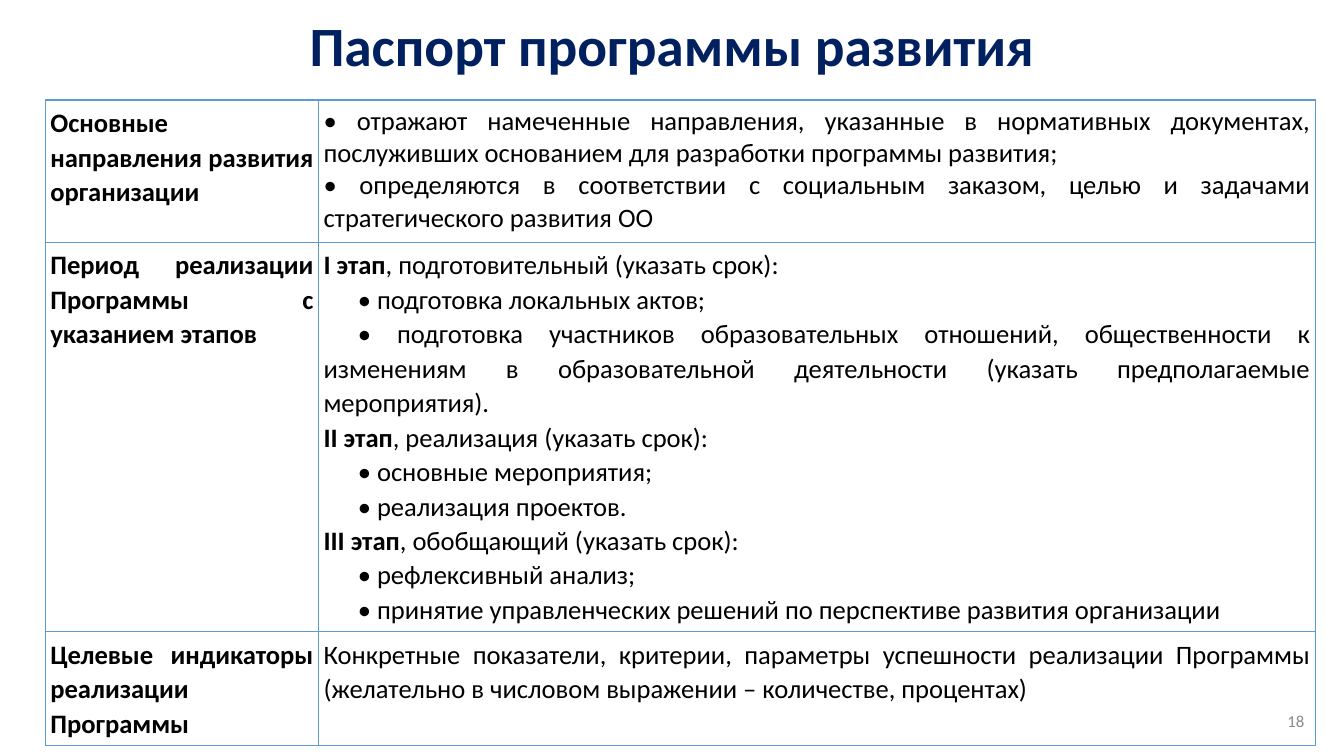
from dataclasses import dataclass

from lxml import etree
from pptx import Presentation
from pptx.dml.color import RGBColor
from pptx.enum.text import MSO_ANCHOR, MSO_AUTO_SIZE, PP_ALIGN
from pptx.oxml.ns import qn
from pptx.util import Pt

CENTER, RIGHT, JUSTIFY = PP_ALIGN.CENTER, PP_ALIGN.RIGHT, PP_ALIGN.JUSTIFY
MIDDLE = MSO_ANCHOR.MIDDLE
NO_AUTOFIT = MSO_AUTO_SIZE.NONE

FONT = "Calibri"
NAVY, BLACK, GRAY, BORDER_BLUE = "002060", "000000", "8C8C8C", "5B9BD5"
TITLE_ONLY_LAYOUT = 5
TABLE_SIZE = 19
CELL_INSET = Pt(3.6)
BULLET_INDENT = Pt(24.5)
COLUMN_WIDTHS = (195.12, 712.08)


@dataclass(frozen=True)
class Item:
    text: str
    lead: str = ""
    indented: bool = False
    bold: bool = False
    line_spacing: float | None = 1.07
    space_after: float = 0


@dataclass(frozen=True)
class PassportRow:
    height: float
    heading: str
    items: list[Item]


def bullet(text: str) -> Item:
    return Item(f"• {text}", indented=True)


def stage(number: str, description: str) -> Item:
    return Item(f", {description} (указать срок):", lead=f"{number} этап")


PASSPORT = [
    PassportRow(101.5, "Основные направления развития организации", [
        Item("• отражают намеченные направления, указанные в нормативных документах, "
             "послуживших основанием для разработки программы развития;", line_spacing=None),
        Item("• определяются в соответствии с социальным заказом, целью и задачами "
             "стратегического развития ОО", line_spacing=None),
    ]),
    PassportRow(267.8, "Период реализации Программы с указанием этапов", [
        stage("I", "подготовительный"),
        bullet("подготовка локальных актов;"),
        bullet("подготовка участников образовательных отношений, общественности к изменениям "
               "в образовательной деятельности (указать предполагаемые мероприятия)."),
        stage("II", "реализация"),
        bullet("основные мероприятия;"),
        bullet("реализация проектов."),
        stage("III", "обобщающий"),
        bullet("рефлексивный анализ;"),
        bullet("принятие управленческих решений по перспективе развития организации"),
    ]),
    PassportRow(79.2, "Целевые индикаторы реализации Программы", [
        Item("Конкретные показатели, критерии, параметры успешности реализации Программы "
             "(желательно в числовом выражении – количестве, процентах)", space_after=8),
    ]),
]


def format_font(font, size: float, color: str, bold: bool = False) -> None:
    font.name = FONT
    font.size = Pt(size)
    font.bold = bold
    font.color.rgb = RGBColor.from_string(color)


def place(shape, left: float, top: float, width: float, height: float) -> None:
    shape.left, shape.top = Pt(left), Pt(top)
    shape.width, shape.height = Pt(width), Pt(height)


def write_line(shape, text: str, alignment, size: float, color: str, bold: bool = False):
    frame = shape.text_frame
    frame.text = text
    frame.word_wrap = True
    frame.auto_size = NO_AUTOFIT
    frame.vertical_anchor = MIDDLE
    paragraph = frame.paragraphs[0]
    paragraph.alignment = alignment
    format_font(paragraph.runs[0].font, size, color, bold)
    return paragraph


def draw_borders(cell) -> None:
    properties = cell._tc.get_or_add_tcPr()
    for position, side in enumerate(("lnL", "lnR", "lnT", "lnB")):
        line = etree.Element(qn(f"a:{side}"), w=str(Pt(1)))
        fill = etree.SubElement(line, qn("a:solidFill"))
        etree.SubElement(fill, qn("a:srgbClr"), val=BORDER_BLUE)
        properties.insert(position, line)


def fill_cell(cell, items: list[Item]) -> None:
    cell.margin_left = cell.margin_right = CELL_INSET
    cell.margin_top = cell.margin_bottom = CELL_INSET
    cell.fill.background()
    draw_borders(cell)
    frame = cell.text_frame
    frame.text = "\n".join(item.lead or item.text for item in items)
    for paragraph, item in zip(frame.paragraphs, items):
        paragraph.alignment = JUSTIFY
        paragraph.space_after = Pt(item.space_after)
        if item.line_spacing:
            paragraph.line_spacing = item.line_spacing
        if item.indented:
            paragraph._p.get_or_add_pPr().set("indent", str(BULLET_INDENT))
        format_font(paragraph.runs[0].font, TABLE_SIZE, BLACK, item.bold or bool(item.lead))
        if item.lead:
            description = paragraph.add_run()
            description.text = item.text
            format_font(description.font, TABLE_SIZE, BLACK)


def add_passport_table(slide) -> None:
    heights = [row.height for row in PASSPORT]
    table = slide.shapes.add_table(len(PASSPORT), len(COLUMN_WIDTHS), Pt(32.4), Pt(71.5),
                                   Pt(sum(COLUMN_WIDTHS)), Pt(sum(heights))).table
    table.first_row = table.horz_banding = False
    for column, width in zip(table.columns, COLUMN_WIDTHS):
        column.width = Pt(width)
    for table_row, row in zip(table.rows, PASSPORT):
        table_row.height = Pt(row.height)
        heading_cell, content_cell = table_row.cells
        fill_cell(heading_cell, [Item(row.heading, bold=True, space_after=8)])
        fill_cell(content_cell, row.items)


def main() -> None:
    presentation = Presentation()
    presentation.slide_width, presentation.slide_height = Pt(960), Pt(540)
    slide = presentation.slides.add_slide(presentation.slide_layouts[TITLE_ONLY_LAYOUT])

    title = slide.shapes.title
    place(title, 66, 9.4, 828, 50.4)
    title_paragraph = write_line(title, "Паспорт программы развития", CENTER, 39.6, NAVY, True)
    title_paragraph.line_spacing = 0.9

    add_passport_table(slide)

    page_number = slide.shapes.add_textbox(Pt(814.3), Pt(500.4), Pt(124.6), Pt(28.8))
    write_line(page_number, "18", RIGHT, 12, GRAY)

    presentation.save("out.pptx")


if __name__ == "__main__":
    main()
